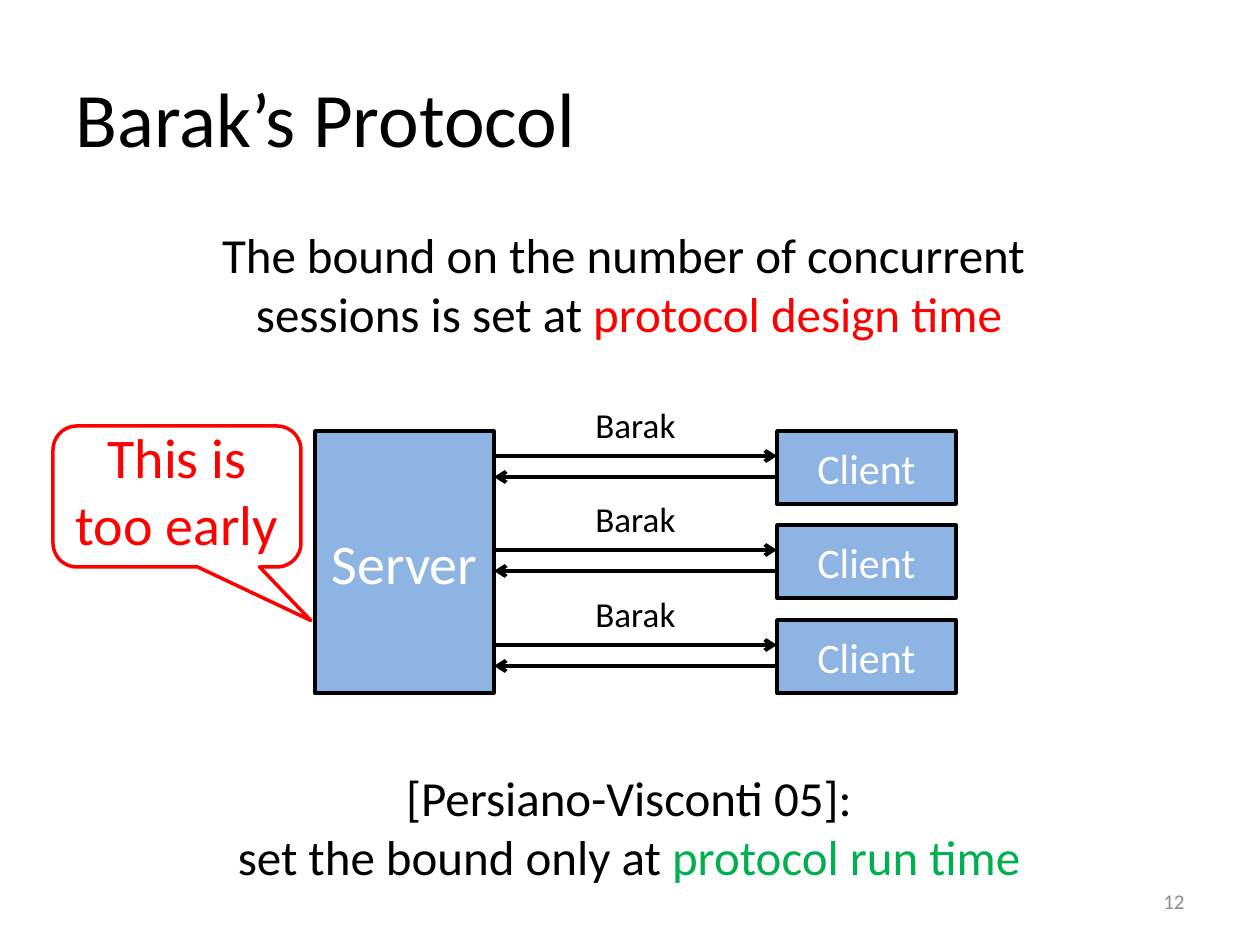
from lxml import etree
from pptx import Presentation
from pptx.dml.color import RGBColor
from pptx.enum.shapes import MSO_CONNECTOR, MSO_SHAPE
from pptx.enum.text import MSO_ANCHOR, PP_ALIGN
from pptx.oxml.ns import qn
from pptx.util import Emu, Pt

PX = 914400 / 126
COLORS = {
    "black": "000000", "white": "FFFFFF", "red": "FF0000",
    "green": "00B050", "gray": "8C8C8C", "blue": "8EB4E3",
}


def px(*values):
    return [Emu(round(v * PX)) for v in values]


def write(sp, lines, size, color, align=PP_ALIGN.CENTER, anchor=MSO_ANCHOR.TOP):
    """Fill a shape with paragraphs, each a list of (text, colour) runs."""
    tf = sp.text_frame
    tf.word_wrap = True
    tf.vertical_anchor = anchor
    for i, runs in enumerate(lines):
        p = tf.paragraphs[0] if i == 0 else tf.add_paragraph()
        p.alignment = align
        p.font.size = Pt(size)
        p.font.name = "Calibri"
        p.font.color.rgb = RGBColor.from_string(COLORS[color])
        for text, run_color in runs:
            if text == "\n":
                p.add_line_break()
                continue
            r = p.add_run()
            r.text = text
            if run_color != color:
                r.font.color.rgb = RGBColor.from_string(COLORS[run_color])


prs = Presentation()
prs.slide_width, prs.slide_height = px(1260, 945)
shapes = prs.slides.add_slide(prs.slide_layouts[6]).shapes

# Title, statements and slide number
MIDDLE = MSO_ANCHOR.MIDDLE
bound = [[("The bound on the number of concurrent ", "black"), ("\n", "black"),
          ("sessions is set at ", "black"), ("protocol design time", "red")]]
answer = [[("[Persiano-Visconti 05]:", "black")],
          [("set the bound only at ", "black"), ("protocol run time", "green")]]
for box, lines, size, color, align, anchor in [
    ((63, 38, 1134, 157), [[("Barak’s Protocol", "black")]], 44, "black", PP_ALIGN.LEFT, MIDDLE),
    ((-2, 218, 1262, 131), bound, 28, "black", PP_ALIGN.CENTER, MSO_ANCHOR.TOP),
    ((-2, 761, 1262, 131), answer, 28, "black", PP_ALIGN.CENTER, MSO_ANCHOR.TOP),
    ((903, 876, 294, 50), [[("12", "gray")]], 12, "gray", PP_ALIGN.RIGHT, MIDDLE),
]:
    write(shapes.add_textbox(*px(*box)), lines, size, color, align, anchor)

# Server and clients
LEFT, RIGHT, TOP, BOX_W = 315, 777, 431, 179
LINK_X, LINK_W = LEFT + BOX_W, RIGHT - LEFT - BOX_W
row_tops = [TOP + i * 189 // 2 for i in range(3)]
nodes = [("Server", LEFT, TOP, 262, 32)]
nodes += [("Client", RIGHT, y, 73, 24) for y in row_tops]
for name, x, y, h, size in nodes:
    sp = shapes.add_shape(MSO_SHAPE.RECTANGLE, *px(x, y, BOX_W, h))
    sp.shadow.inherit = False
    sp.fill.solid()
    sp.fill.fore_color.rgb = RGBColor.from_string(COLORS["blue"])
    sp.line.color.rgb = RGBColor.from_string(COLORS["black"])
    sp.line.width = Pt(2)
    write(sp, [[(name, "white")]], size, "white", anchor=MIDDLE)

# Labelled message arrows, one pair per client
for y in row_tops:
    label = shapes.add_textbox(*px(LINK_X, y - 34, LINK_W, 55))
    write(label, [[("Barak", "black")]], 20, "black")
    for start, end, dy in [(LINK_X, RIGHT, 25), (RIGHT, LINK_X, 46)]:
        line = shapes.add_connector(MSO_CONNECTOR.STRAIGHT, *px(start, y + dy, end, y + dy))
        line.line.color.rgb = RGBColor.from_string(COLORS["black"])
        line.line.width = Pt(2.25)
        etree.SubElement(line.line._get_or_add_ln(), qn("a:tailEnd"), type="arrow")
        etree.SubElement(line._element.spPr, qn("a:effectLst"))

# Callout
sp = shapes.add_shape(MSO_SHAPE.ROUNDED_RECTANGULAR_CALLOUT, *px(53, 426, 248, 141))
sp.shadow.inherit = False
sp.fill.background()
sp.line.color.rgb = RGBColor.from_string(COLORS["red"])
sp.line.width = Pt(2)
for i, value in enumerate((0.54, 0.88, 0.17)):
    sp.adjustments[i] = value
note = shapes.add_textbox(*px(53, 416, 248, 149))
write(note, [[("This is too early", "red")]], 32, "red")

prs.save("out.pptx")
